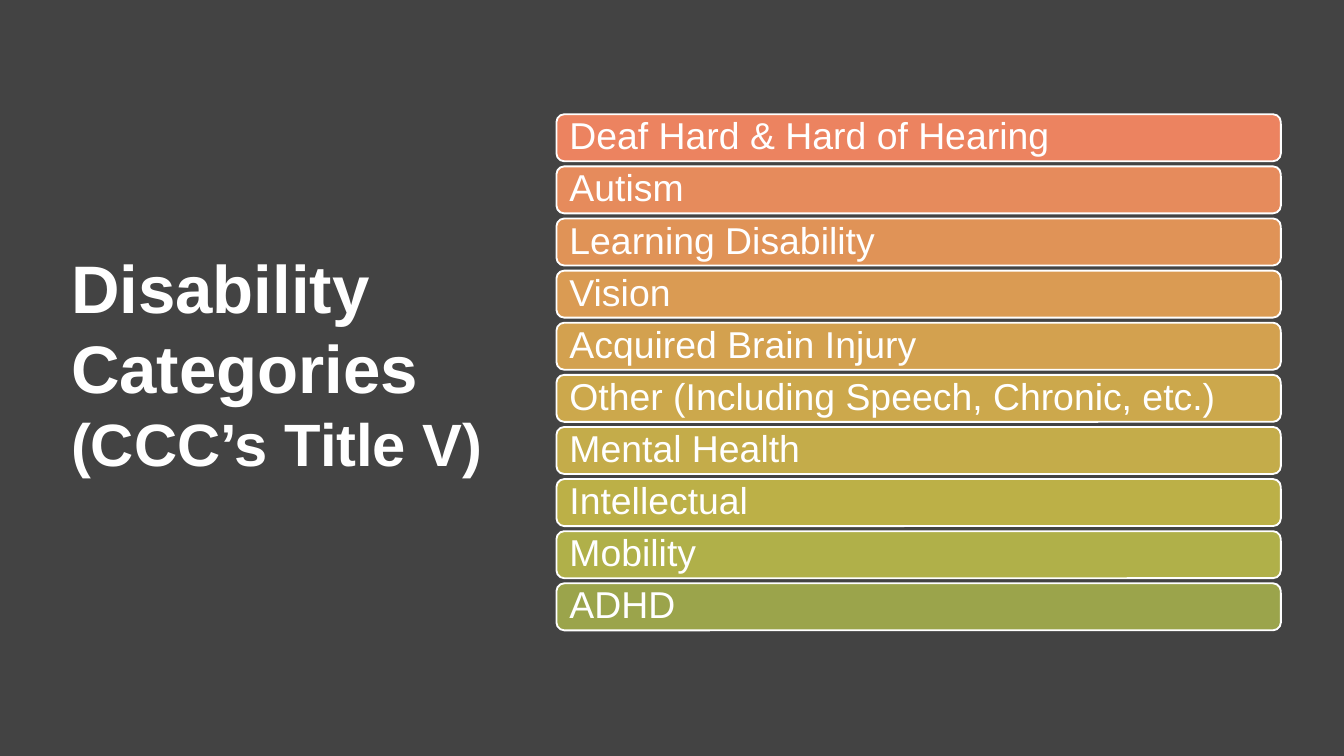
from pptx import Presentation
from pptx.dml.color import RGBColor
from pptx.enum.shapes import MSO_SHAPE
from pptx.enum.text import MSO_ANCHOR, PP_ALIGN
from pptx.util import Inches, Pt

ROUNDED = MSO_SHAPE.ROUNDED_RECTANGLE
MIDDLE = MSO_ANCHOR.MIDDLE
LEFT = PP_ALIGN.LEFT

COLORS = {"background": "434343", "white": "FFFFFF"}
WHITE = RGBColor.from_string(COLORS["white"])

CATEGORIES = {
    "Deaf Hard & Hard of Hearing": "EC8360",
    "Autism": "E68B5C",
    "Learning Disability": "E09357",
    "Vision": "DA9B53",
    "Acquired Brain Injury": "D3A14F",
    "Other (Including Speech, Chronic, etc.)": "CCA84C",
    "Mental Health": "C4AC4A",
    "Intellectual": "BCB047",
    "Mobility": "B0B049",
    "ADHD": "9BA44B",
}
TITLE_LINES = [("Disability", 36), ("Categories", 36), ("(CCC’s Title V)", 32)]


def write_line(paragraph, text, size, bold, spacing):
    paragraph.alignment = LEFT
    paragraph.line_spacing = spacing
    run = paragraph.add_run()
    run.text = text
    font_format = {"name": "Arial", "size": Pt(size), "bold": bold}
    for attribute, value in font_format.items():
        setattr(run.font, attribute, value)
    run.font.color.rgb = WHITE


def format_frame(frame, **frame_format):
    for attribute, value in frame_format.items():
        setattr(frame, attribute, value)


# Widescreen slide, 16:9
prs = Presentation()
prs.slide_width = Inches(10)
prs.slide_height = Inches(10) * 9 // 16
slide = prs.slides.add_slide(prs.slide_layouts[6])
slide.background.fill.solid()
slide.background.fill.fore_color.rgb = RGBColor.from_string(COLORS["background"])

# Category bars, evenly spaced from first to last
first_top, last_top = 0.85, 4.34
pitch = (last_top - first_top) / (len(CATEGORIES) - 1)
for row, (category, color) in enumerate(CATEGORIES.items()):
    bar = slide.shapes.add_shape(
        ROUNDED, Inches(4.14), Inches(first_top + row * pitch), Inches(5.39), Inches(0.35)
    )
    bar.shadow.inherit = False
    bar.fill.solid()
    bar.fill.fore_color.rgb = RGBColor.from_string(color)
    bar.line.color.rgb = WHITE
    bar.line.width = Pt(1)
    format_frame(
        bar.text_frame, word_wrap=True, vertical_anchor=MIDDLE,
        margin_left=Inches(0.08), margin_right=Inches(0.08), margin_top=0, margin_bottom=0,
    )
    write_line(bar.text_frame.paragraphs[0], category, 20, False, 0.9)

# Title
title = slide.shapes.add_textbox(Inches(0.43), Inches(1.73), Inches(3.28), Inches(1.95)).text_frame
inset = Inches(0.1)
format_frame(
    title, word_wrap=True,
    margin_left=inset, margin_right=inset, margin_top=inset, margin_bottom=inset,
)
for number, (text, size) in enumerate(TITLE_LINES):
    paragraph = title.add_paragraph() if number else title.paragraphs[0]
    write_line(paragraph, text, size, True, 1.0)

prs.save("out.pptx")
